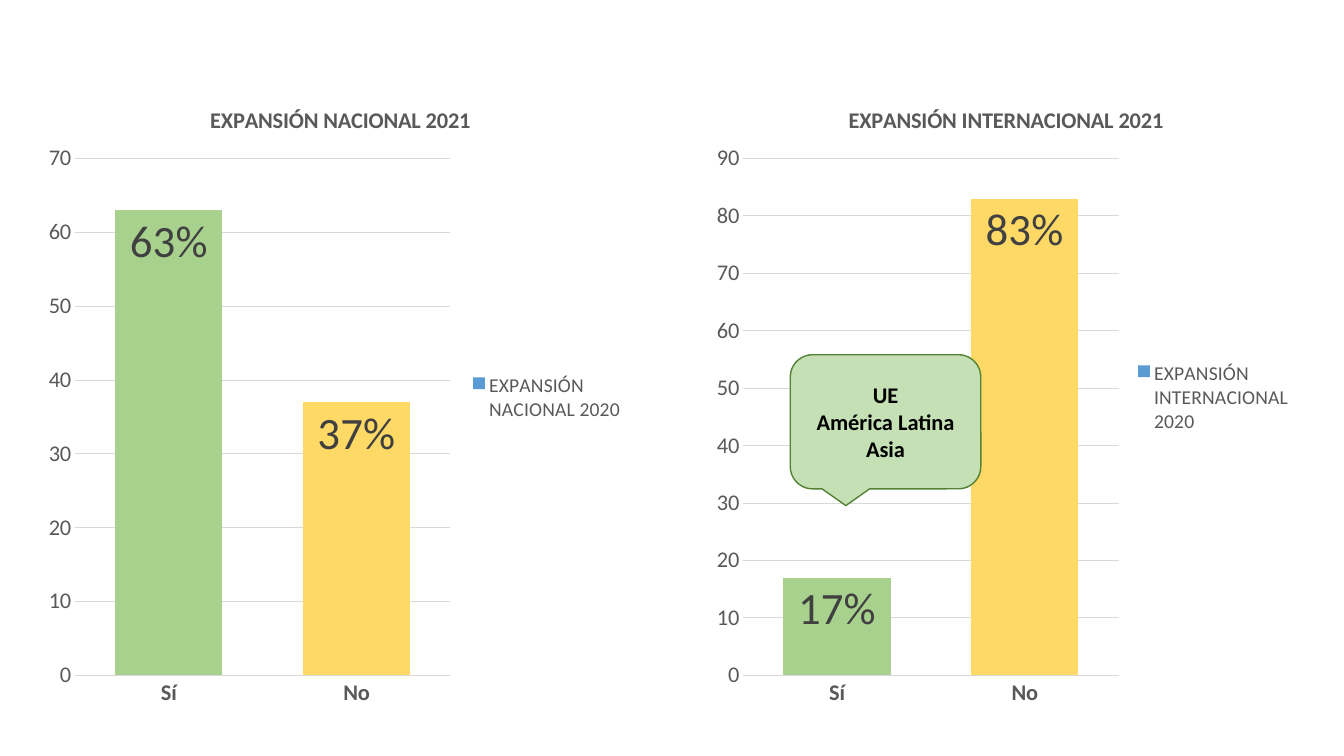
import pptx
import pptx.chart.data
import pptx.dml.color
import pptx.enum.chart
import pptx.enum.shapes
import pptx.enum.text
import pptx.oxml
import pptx.oxml.ns
import pptx.util

Pt = pptx.util.Pt
RGBColor = pptx.dml.color.RGBColor

CATEGORIES = ["Sí", "No"]
# title, series name, values, axis maximum, left edge, title x as a share of chart width
CHARTS = [
    ("EXPANSIÓN NACIONAL 2021", "EXPANSIÓN NACIONAL 2020", (63, 37), 70, 28.1, 0.28),
    ("EXPANSIÓN INTERNACIONAL 2021", "EXPANSIÓN INTERNACIONAL 2020", (17, 83), 90, 505.4, 0.23),
]
REGIONS = ["UE", "América Latina", "Asia"]

CHART_TOP, CHART_W, CHART_H = 53.3, 425.5, 461.5
PLOT_AREA = {"x": 0.06, "y": 0.13, "w": 0.63, "h": 0.8}
TITLE_Y = 0.04
CALLOUT = (564.5, 253.4, 136.1, 95.8)

FONT = "Calibri"
GREEN = RGBColor(0xA9, 0xD1, 0x8E)
YELLOW = RGBColor(0xFF, 0xD9, 0x66)
BLUE = RGBColor(0x5B, 0x9B, 0xD5)
GRAY = RGBColor(0x59, 0x59, 0x59)
DARK = RGBColor(0x40, 0x40, 0x40)
GRID = RGBColor(0xD9, 0xD9, 0xD9)
BLACK = RGBColor(0, 0, 0)
CALLOUT_FILL = RGBColor(0xC5, 0xE0, 0xB4)
CALLOUT_LINE = RGBColor(0x54, 0x82, 0x35)


def set_font(font, size, color, bold=False):
    font.name, font.size, font.bold = FONT, Pt(size), bold
    font.color.rgb = color


def add_text(p, text, size=16, color=BLACK, bold=True):
    r = p.add_run()
    r.text = text
    set_font(r.font, size, color, bold)


def set_fill(format_, color):
    format_.fill.solid()
    format_.fill.fore_color.rgb = color


def set_line(line, color, width):
    line.color.rgb = color
    line.width = Pt(width)


def set_layout(parent, index, box, inner=False):
    """Place a chart part by shares of the chart's width and height."""
    for old in parent.findall(pptx.oxml.ns.qn("c:layout")):
        parent.remove(old)
    target = '<c:layoutTarget val="inner"/>' if inner else ""
    modes = "".join(f'<c:{k}Mode val="edge"/>' for k in "xy")
    sizes = "".join(f'<c:{k} val="{v}"/>' for k, v in box.items())
    parent.insert(index, pptx.oxml.parse_xml(
        f'<c:layout {pptx.oxml.ns.nsdecls("c")}><c:manualLayout>'
        f"{target}{modes}{sizes}</c:manualLayout></c:layout>"))


def add_column_chart(s, title, name, values, maximum, left, title_x):
    data = pptx.chart.data.CategoryChartData(number_format='0"%"')
    data.categories = CATEGORIES
    data.add_series(name, values)
    chart = s.shapes.add_chart(
        pptx.enum.chart.XL_CHART_TYPE.COLUMN_CLUSTERED,
        Pt(left), Pt(CHART_TOP), Pt(CHART_W), Pt(CHART_H), data).chart
    set_font(chart.font, 10, BLACK)

    chart.has_title = True
    add_text(chart.chart_title.text_frame.paragraphs[0], title, color=GRAY)
    chart_title = chart.chart_title._element
    set_layout(chart_title, 1, {"x": title_x, "y": TITLE_Y})
    set_layout(chart._chartSpace.chart.plotArea, 0, PLOT_AREA, inner=True)

    chart.has_legend = True
    chart.legend.position = pptx.enum.chart.XL_LEGEND_POSITION.RIGHT
    chart.legend.include_in_layout = False
    set_font(chart.legend.font, 14, GRAY)

    cat, val = chart.category_axis, chart.value_axis
    for axis, bold in ((cat, True), (val, False)):
        axis.major_tick_mark = pptx.enum.chart.XL_TICK_MARK.NONE
        axis.minor_tick_mark = pptx.enum.chart.XL_TICK_MARK.NONE
        set_font(axis.tick_labels.font, 16, GRAY, bold)
    set_line(cat.format.line, GRID, 0.75)
    val.format.line.fill.background()
    val.minimum_scale, val.maximum_scale, val.major_unit = 0, maximum, 10
    val.tick_labels.number_format = "0"
    val.tick_labels.number_format_is_linked = False
    val.has_major_gridlines = True
    set_line(val.major_gridlines.format.line, GRID, 0.75)

    plot = chart.plots[0]
    plot.gap_width, plot.overlap, plot.vary_by_categories = 75, 40, False
    series = plot.series[0]
    set_fill(series.format, BLUE)
    for i, color in enumerate((GREEN, YELLOW)):
        set_fill(series.points[i].format, color)
    labels = series.data_labels
    labels.show_value = True
    labels.number_format = '0"%"'
    labels.number_format_is_linked = False
    labels.position = pptx.enum.chart.XL_LABEL_POSITION.INSIDE_END
    set_font(labels.font, 32, DARK)


def add_callout(s):
    sp = s.shapes.add_shape(
        pptx.enum.shapes.MSO_SHAPE.ROUNDED_RECTANGULAR_CALLOUT, *map(Pt, CALLOUT))
    sp.shadow.inherit = False
    set_fill(sp, CALLOUT_FILL)
    set_line(sp.line, CALLOUT_LINE, 1)
    tf = sp.text_frame
    tf.word_wrap = True
    tf.vertical_anchor = pptx.enum.text.MSO_ANCHOR.MIDDLE
    for i, region in enumerate(REGIONS):
        p = tf.add_paragraph() if i else tf.paragraphs[0]
        p.alignment = pptx.enum.text.PP_ALIGN.CENTER
        add_text(p, region)


def main():
    prs = pptx.Presentation()
    prs.slide_width, prs.slide_height = Pt(960), Pt(540)
    s = prs.slides.add_slide(prs.slide_layouts[6])
    for chart in CHARTS:
        add_column_chart(s, *chart)
    add_callout(s)
    prs.save("out.pptx")


if __name__ == "__main__":
    main()
